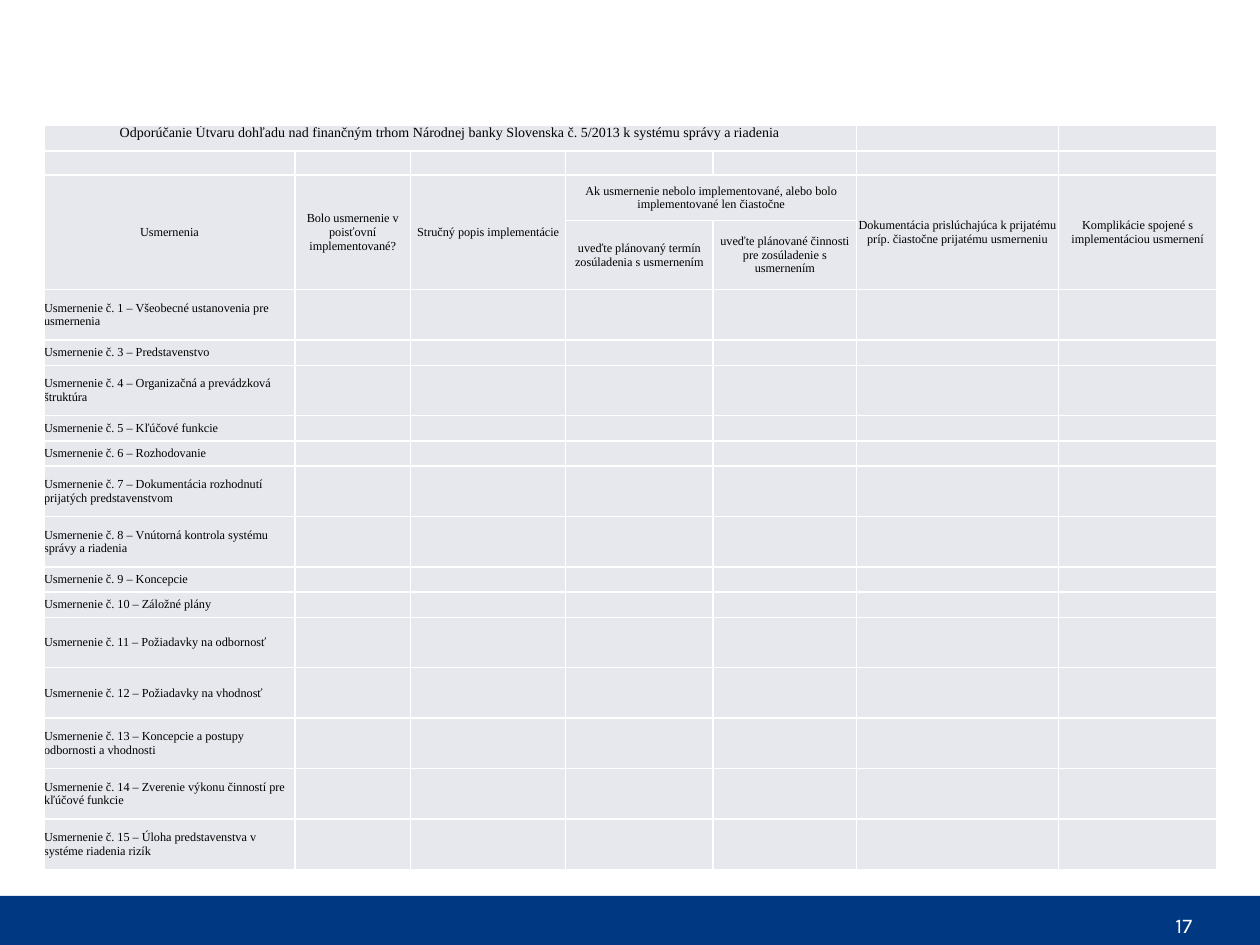
from lxml import etree
from pptx import Presentation
from pptx.dml.color import RGBColor
from pptx.enum.shapes import MSO_SHAPE
from pptx.enum.text import MSO_ANCHOR, PP_ALIGN
from pptx.oxml.ns import qn
from pptx.util import Inches, Pt

RECT = MSO_SHAPE.RECTANGLE
MIDDLE, TOP = MSO_ANCHOR.MIDDLE, MSO_ANCHOR.TOP
LEFT, CENTER, RIGHT = PP_ALIGN.LEFT, PP_ALIGN.CENTER, PP_ALIGN.RIGHT

NAVY = RGBColor(0x00, 0x38, 0x81)
GRAY = RGBColor(0xE7, 0xE8, 0xED)
WHITE = RGBColor(0xFF, 0xFF, 0xFF)
BLACK = RGBColor(0x00, 0x00, 0x00)
SERIF, SANS = "Times New Roman", "Karla"

COLS = [1.99, 0.92, 1.23, 1.17, 1.14, 1.6, 1.26]
HEAD_ROWS = [0.21, 0.19, 0.36, 0.55]
TITLE = ("Odporúčanie Útvaru dohľadu nad finančným trhom Národnej banky "
         "Slovenska č. 5/2013 k systému správy a riadenia")

# Header cells: row, column, rows spanned, columns spanned, text
HEADS = [
    (2, 0, 2, 1, "Usmernenia"),
    (2, 1, 2, 1, "Bolo usmernenie v poisťovní implementované?"),
    (2, 2, 2, 1, "Stručný popis implementácie"),
    (2, 3, 1, 2, "Ak usmernenie nebolo implementované, alebo bolo "
                 "implementované len čiastočne"),
    (2, 5, 2, 1, "Dokumentácia prislúchajúca k prijatému príp. čiastočne "
                 "prijatému usmerneniu"),
    (2, 6, 2, 1, "Komplikácie spojené s implementáciou usmernení"),
    (3, 3, 1, 1, "uveďte plánovaný termín zosúladenia s usmernením"),
    (3, 4, 1, 1, "uveďte plánované činnosti pre zosúladenie s usmernením"),
]

# Guidelines: number, name, row height
RULES = [
    (1, "Všeobecné ustanovenia pre usmernenia", 0.4),
    (3, "Predstavenstvo", 0.2),
    (4, "Organizačná a prevádzková štruktúra", 0.4),
    (5, "Kľúčové funkcie", 0.2),
    (6, "Rozhodovanie", 0.2),
    (7, "Dokumentácia rozhodnutí prijatých predstavenstvom", 0.4),
    (8, "Vnútorná kontrola systému správy a riadenia", 0.4),
    (9, "Koncepcie", 0.2),
    (10, "Záložné plány", 0.2),
    (11, "Požiadavky na odbornosť", 0.4),
    (12, "Požiadavky na vhodnosť", 0.4),
    (13, "Koncepcie a postupy odbornosti a vhodnosti", 0.4),
    (14, "Zverenie výkonu činností pre kľúčové funkcie", 0.4),
    (15, "Úloha predstavenstva v systéme riadenia rizík", 0.4),
]


def style_text(para, size, face, color, align):
    para.alignment = align
    for run in para.runs:
        run.font.size = Pt(size)
        run.font.name = face
        run.font.bold = False
        run.font.color.rgb = color


def style_cell(cell):
    """Gray fill, white borders, no margins and a small empty line."""
    cell.margin_left = cell.margin_right = 0
    cell.margin_top = cell.margin_bottom = 0
    props = cell._tc.get_or_add_tcPr()
    for side in ("a:lnL", "a:lnR", "a:lnT", "a:lnB"):
        line = etree.SubElement(props, qn(side), w=str(Pt(1)))
        fill = etree.SubElement(line, qn("a:solidFill"))
        etree.SubElement(fill, qn("a:srgbClr"), val=str(WHITE))
    cell.fill.solid()
    cell.fill.fore_color.rgb = GRAY
    para = cell.text_frame.paragraphs[0]
    etree.SubElement(para._p, qn("a:endParaRPr"), sz="700")


def write_cell(cell, text, size=7, align=CENTER, anchor=MIDDLE):
    cell.vertical_anchor = anchor
    para = cell.text_frame.paragraphs[0]
    para.text = text
    style_text(para, size, SERIF, BLACK, align)


def add_grid(slide):
    rows = HEAD_ROWS + [high for _, _, high in RULES]
    frame = slide.shapes.add_table(
        len(rows), len(COLS), Inches(0.35), Inches(0.99),
        Inches(sum(COLS)), Inches(sum(rows)))
    table = frame.table
    table.first_row = table.horz_banding = False
    for col, wide in zip(table.columns, COLS):
        col.width = Inches(wide)
    for row, high in zip(table.rows, rows):
        row.height = Inches(high)
    for cell in table.iter_cells():
        style_cell(cell)
    return table


def fill_grid(table):
    # Title row
    table.cell(0, 0).merge(table.cell(0, 4))
    write_cell(table.cell(0, 0), TITLE, size=8, anchor=TOP)
    # Column headers
    for row, col, down, over, text in HEADS:
        cell = table.cell(row, col)
        if down > 1 or over > 1:
            cell.merge(table.cell(row + down - 1, col + over - 1))
        write_cell(cell, text)
    # Guideline names
    for row, (num, name, _) in enumerate(RULES, len(HEAD_ROWS)):
        write_cell(table.cell(row, 0), f"Usmernenie č. {num} – {name}",
                   align=LEFT)


def add_footer(slide):
    bar = slide.shapes.add_shape(
        RECT, 0, Inches(7.11), Inches(10), Inches(0.39))
    bar.shadow.inherit = False
    bar.fill.solid()
    bar.fill.fore_color.rgb = NAVY
    bar.line.fill.background()
    box = slide.shapes.add_textbox(
        Inches(8.62), Inches(7.19), Inches(0.94), Inches(0.31))
    frame = box.text_frame
    frame.word_wrap = True
    frame.vertical_anchor = MIDDLE
    frame.text = "17"
    style_text(frame.paragraphs[0], 12, SANS, WHITE, RIGHT)


def main():
    deck = Presentation()
    deck.slide_width, deck.slide_height = Inches(10), Inches(7.5)
    slide = deck.slides.add_slide(deck.slide_layouts[6])
    add_footer(slide)
    fill_grid(add_grid(slide))
    deck.save("out.pptx")


if __name__ == "__main__":
    main()
